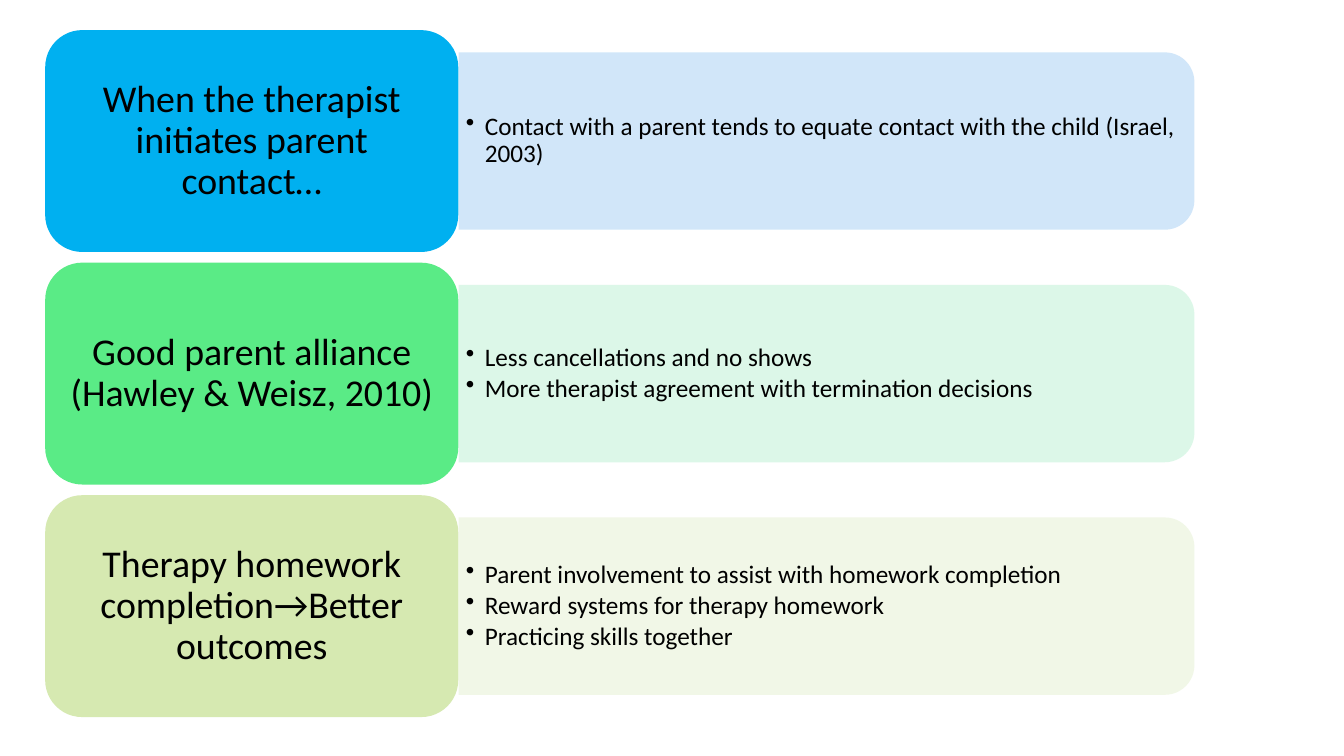
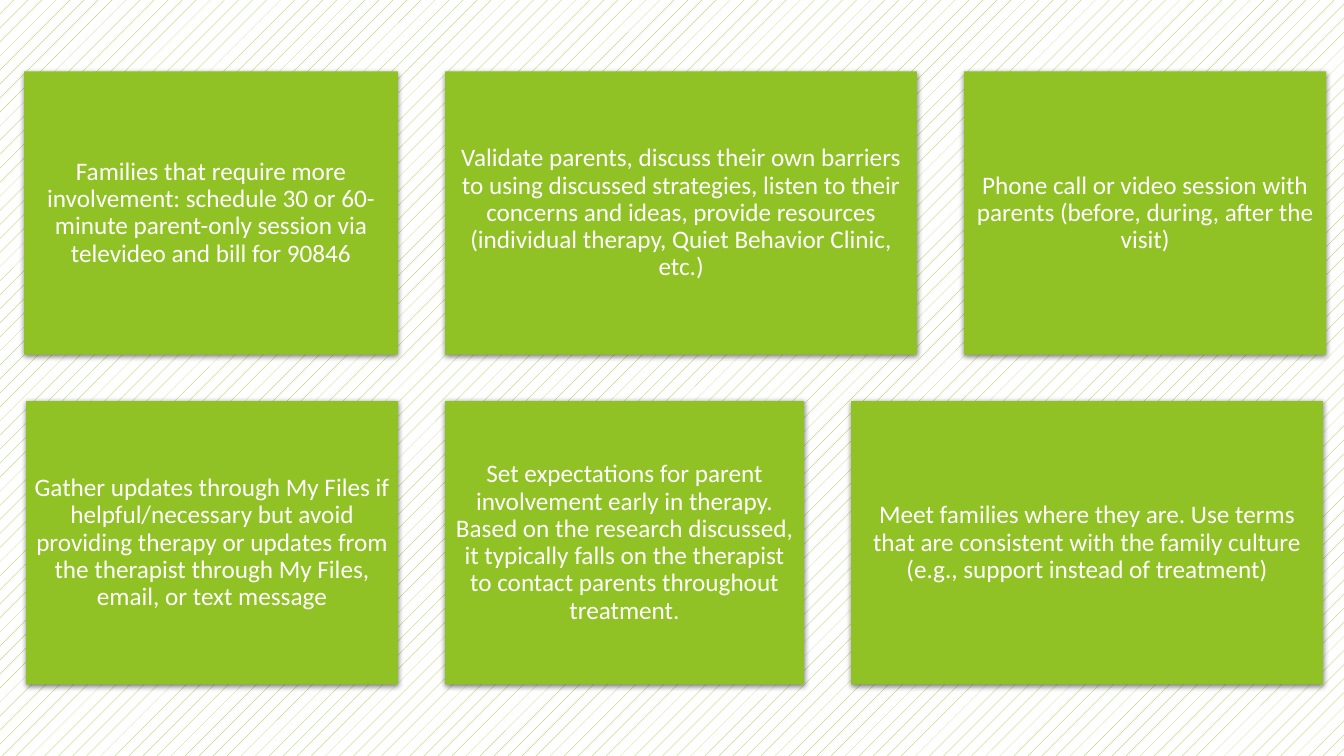
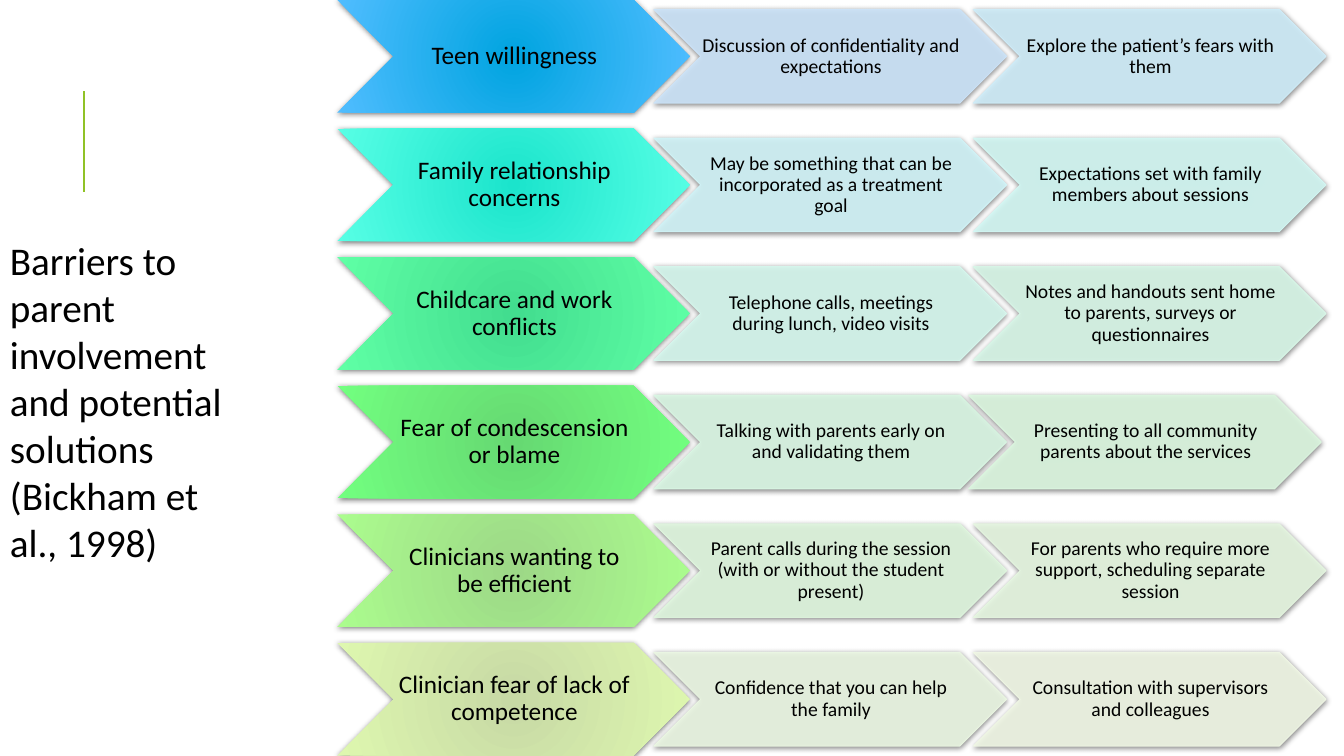
from lxml import etree
from pptx import Presentation
from pptx.dml.color import RGBColor
from pptx.enum.dml import MSO_PATTERN
from pptx.enum.shapes import MSO_CONNECTOR, MSO_SHAPE
from pptx.enum.text import MSO_ANCHOR, PP_ALIGN
from pptx.oxml.ns import qn
from pptx.util import Cm, Pt

RECTANGLE = MSO_SHAPE.RECTANGLE
ROUNDED = MSO_SHAPE.ROUNDED_RECTANGLE
ROUNDED_TOP = MSO_SHAPE.ROUND_2_SAME_RECTANGLE
CHEVRON = MSO_SHAPE.CHEVRON
STRAIGHT = MSO_CONNECTOR.STRAIGHT
DOTTED = MSO_PATTERN.PERCENT_5
MIDDLE = MSO_ANCHOR.MIDDLE
CENTER = PP_ALIGN.CENTER
LEFT = PP_ALIGN.LEFT

BLACK = RGBColor(0x00, 0x00, 0x00)
WHITE = RGBColor(0xFF, 0xFF, 0xFF)
GREEN = RGBColor(0x90, 0xC2, 0x26)
SKY = RGBColor(0x00, 0xB0, 0xF0)
MINT = RGBColor(0x5A, 0xEB, 0x86)
LIME = RGBColor(0xD6, 0xE9, 0xB1)
PALE_BLUE = RGBColor(0xCC, 0xE4, 0xF9)
PALE_MINT = RGBColor(0xD9, 0xF7, 0xE6)
PALE_LIME = RGBColor(0xF0, 0xF7, 0xE5)

FINDINGS = [
    (SKY, PALE_BLUE, "When the therapist initiates parent contact…",
     ["Contact with a parent tends to equate contact with the child (Israel, 2003)"]),
    (MINT, PALE_MINT, "Good parent alliance (Hawley & Weisz, 2010)",
     ["Less cancellations and no shows",
      "More therapist agreement with termination decisions"]),
    (LIME, PALE_LIME, "Therapy homework completion→Better outcomes",
     ["Parent involvement to assist with homework completion",
      "Reward systems for therapy homework",
      "Practicing skills together"]),
]

TIP_ROWS = [
    (0.61, 1.8, [
        (9.42, "Families that require more involvement: schedule 30 or 60-minute "
               "parent-only session via televideo and bill for 90846"),
        (11.89, "Validate parents, discuss their own barriers to using discussed "
                "strategies, listen to their concerns and ideas, provide resources "
                "(individual therapy, Quiet Behavior Clinic, etc.)"),
        (9.12, "Phone call or video session with parents (before, during, after the visit)"),
    ]),
    (0.66, 10.11, [
        (9.37, "Gather updates through My Files if helpful/necessary but avoid providing "
               "therapy or updates from the therapist through My Files, email, or text message"),
        (9.04, "Set expectations for parent involvement early in therapy. Based on the "
               "research discussed, it typically falls on the therapist to contact parents "
               "throughout treatment."),
        (11.89, "Meet families where they are. Use terms that are consistent with the "
                "family culture (e.g., support instead of treatment)"),
    ]),
]

BARRIERS = [
    ("Teen willingness", RGBColor(0x00, 0xA4, 0xE0), RGBColor(0x50, 0xBD, 0xFF), [
        (16.48, PALE_BLUE, "Discussion of confidentiality and expectations"),
        (24.53, RGBColor(0xCF, 0xED, 0xF9), "Explore the patient’s fears with them")]),
    ("Family relationship concerns", RGBColor(0x1B, 0xE4, 0xCC), RGBColor(0x57, 0xFF, 0xE5), [
        (16.48, RGBColor(0xD1, 0xF4, 0xF8),
         "May be something that can be incorporated as a treatment goal"),
        (24.53, RGBColor(0xD3, 0xF8, 0xF4),
         "Expectations set with family members about sessions")]),
    ("Childcare and work conflicts", RGBColor(0x42, 0xDD, 0x8F), RGBColor(0x5F, 0xFF, 0xA5), [
        (16.48, RGBColor(0xD6, 0xF8, 0xEE),
         "Telephone calls, meetings during lunch, video visits"),
        (24.53, RGBColor(0xD8, 0xF7, 0xE8),
         "Notes and handouts sent home to parents, surveys or questionnaires")]),
    ("Fear of condescension or blame", RGBColor(0x66, 0xD9, 0x72), RGBColor(0x72, 0xFF, 0x80), [
        (16.48, RGBColor(0xDA, 0xF7, 0xE4),
         "Talking with parents early on and validating them"),
        (24.41, RGBColor(0xDC, 0xF7, 0xE0),
         "Presenting to all community parents about the services")]),
    ("Clinicians wanting to be efficient", RGBColor(0x9D, 0xD8, 0x87), RGBColor(0xAB, 0xFC, 0x8E), [
        (16.48, RGBColor(0xE0, 0xF7, 0xDF),
         "Parent calls during the session (with or without the student present)"),
        (24.53, RGBColor(0xE6, 0xF7, 0xE1),
         "For parents who require more support, scheduling separate session")]),
    ("Clinician fear of lack of competence", RGBColor(0xC7, 0xD9, 0xA5), RGBColor(0xDE, 0xF7, 0xAF), [
        (16.48, RGBColor(0xEB, 0xF7, 0xE3), "Confidence that you can help the family"),
        (24.53, PALE_LIME, "Consultation with supervisors and colleagues")]),
]


class Deck:
    font_name = "Calibri"
    line_spacing = 0.9

    def __init__(self):
        self.presentation = Presentation()
        self.presentation.slide_width = Cm(33.87)
        self.presentation.slide_height = Cm(19.05)
        self.slide = None

    def add_slide(self):
        layout = self.presentation.slide_layouts[6]
        self.slide = self.presentation.slides.add_slide(layout)

    def pattern_background(self, color):
        fill = self.slide.background.fill
        fill.patterned()
        fill.pattern = DOTTED
        fill.fore_color.rgb = color
        fill.back_color.rgb = WHITE

    def shape(self, kind, left, top, width, height, color):
        shape = self.slide.shapes.add_shape(kind, Cm(left), Cm(top), Cm(width), Cm(height))
        shape.shadow.inherit = False
        shape.fill.solid()
        shape.fill.fore_color.rgb = color
        shape.line.fill.background()
        return shape

    def text_box(self, left, top, width, height):
        box = self.slide.shapes.add_textbox(Cm(left), Cm(top), Cm(width), Cm(height))
        box.text_frame.word_wrap = True
        return box

    def set_text(self, shape, lines, size, color=BLACK, align=CENTER, spacing=line_spacing):
        frame = shape.text_frame
        frame.text = "\n".join(lines)
        for paragraph in frame.paragraphs:
            paragraph.alignment = align
            paragraph.line_spacing = spacing
            paragraph.font.name = self.font_name
            paragraph.font.size = Pt(size)
            paragraph.font.color.rgb = color

    def center_text(self, shape, horizontal, vertical):
        frame = shape.text_frame
        frame.vertical_anchor = MIDDLE
        frame.margin_left = frame.margin_right = Cm(horizontal)
        frame.margin_top = frame.margin_bottom = Cm(vertical)

    def bullets(self, shape):
        for paragraph in shape.text_frame.paragraphs:
            paragraph.space_after = Pt(2.7)
            properties = paragraph._p.get_or_add_pPr()
            properties.set("marL", str(Cm(0.48)))
            properties.set("indent", str(-Cm(0.48)))
            bullet = etree.Element(qn("a:buChar"), char="•")
            properties.find(qn("a:defRPr")).addprevious(bullet)

    def translucent(self, shape):
        for color in shape._element.spPr.iter(qn("a:srgbClr")):
            etree.SubElement(color, qn("a:alpha"), val="90000")

    def drop_shadow(self, shape):
        effects = shape._element.spPr.find(qn("a:effectLst"))
        shadow = etree.SubElement(effects, qn("a:outerShdw"), blurRad=str(Pt(4)),
                                  dist=str(Pt(1)), dir="5400000", rotWithShape="0")
        color = etree.SubElement(shadow, qn("a:srgbClr"), val=str(BLACK))
        etree.SubElement(color, qn("a:alpha"), val="50000")

    def radial_fill(self, shape, inner, outer):
        shape.fill.gradient()
        for stop, color in zip(shape.fill.gradient_stops, (inner, outer)):
            stop.color.rgb = color
        gradient = shape._element.spPr.find(qn("a:gradFill"))
        gradient.remove(gradient.find(qn("a:lin")))
        circle = etree.SubElement(gradient, qn("a:path"), {"path": "circle"})
        edges = dict.fromkeys("ltrb", "100000")
        etree.SubElement(circle, qn("a:fillToRect"), edges)

    def finding(self, top, label_color, panel_color, label_text, points):
        left, width, height = 11.56, 18.54, 4.47
        middle = top + 5.59 / 2
        panel = self.shape(ROUNDED_TOP, left + (width - height) / 2, middle - width / 2,
                           height, width, panel_color)
        panel.rotation = 90
        self.translucent(panel)
        box = self.text_box(left, middle - 2.02, 18.31, 4.04)
        self.center_text(box, 0.18, 0.1)
        self.set_text(box, points, 18, align=LEFT)
        self.bullets(box)
        label = self.shape(ROUNDED, 1.14, top, 10.41, 5.59, label_color)
        self.center_text(label, 0.28, 0.15)
        self.set_text(label, [label_text], 27)

    def tip(self, left, top, width, text):
        card = self.shape(RECTANGLE, left, top, width, 7.14, GREEN)
        self.drop_shadow(card)
        self.center_text(card, 0.18, 0.18)
        self.set_text(card, [text], 18, WHITE)

    def chevron(self, left, top, height, color, text, size):
        chevron = self.shape(CHEVRON, left, top, 8.89, height, color)
        self.center_text(chevron, 0.04, 0.03)
        chevron.text_frame.margin_right = 0
        self.set_text(chevron, [text], size)
        return chevron

    def barrier(self, top, text, inner, outer):
        chevron = self.chevron(8.5, top, 2.84, inner, text, 18)
        self.radial_fill(chevron, inner, outer)
        self.drop_shadow(chevron)

    def solution(self, left, top, color, text):
        chevron = self.chevron(left, top, 2.36, color, text, 14)
        chevron.line.color.rgb = color
        chevron.line.width = Pt(0.75)
        self.translucent(chevron)
        self.drop_shadow(chevron)

    def accent_line(self, x, top, bottom):
        line = self.slide.shapes.add_connector(STRAIGHT, Cm(x), Cm(bottom), Cm(x), Cm(top))
        line.line.color.rgb = GREEN
        line.line.width = Pt(1.5)
        etree.SubElement(line._element.spPr, qn("a:effectLst"))

    def side_title(self, text):
        box = self.text_box(0, 5.82, 6.58, 9.83)
        self.set_text(box, [text], 28, align=LEFT, spacing=1.0)


def main():
    deck = Deck()

    deck.add_slide()
    for row, finding in enumerate(FINDINGS):
        deck.finding(0.76 + row * 5.86, *finding)

    deck.add_slide()
    deck.pattern_background(GREEN)
    for left, top, cards in TIP_ROWS:
        for width, text in cards:
            deck.tip(left, top, width, text)
            left += width + 1.19

    deck.add_slide()
    deck.accent_line(2.11, 2.29, 4.83)
    for row, (text, inner, outer, solutions) in enumerate(BARRIERS):
        top = row * 3.24
        deck.barrier(top, text, inner, outer)
        for left, color, solution in solutions:
            deck.solution(left, top + 0.24, color, solution)
    deck.side_title("Barriers to parent involvement and potential solutions (Bickham et al., 1998)")

    deck.presentation.save("out.pptx")


if __name__ == "__main__":
    main()
